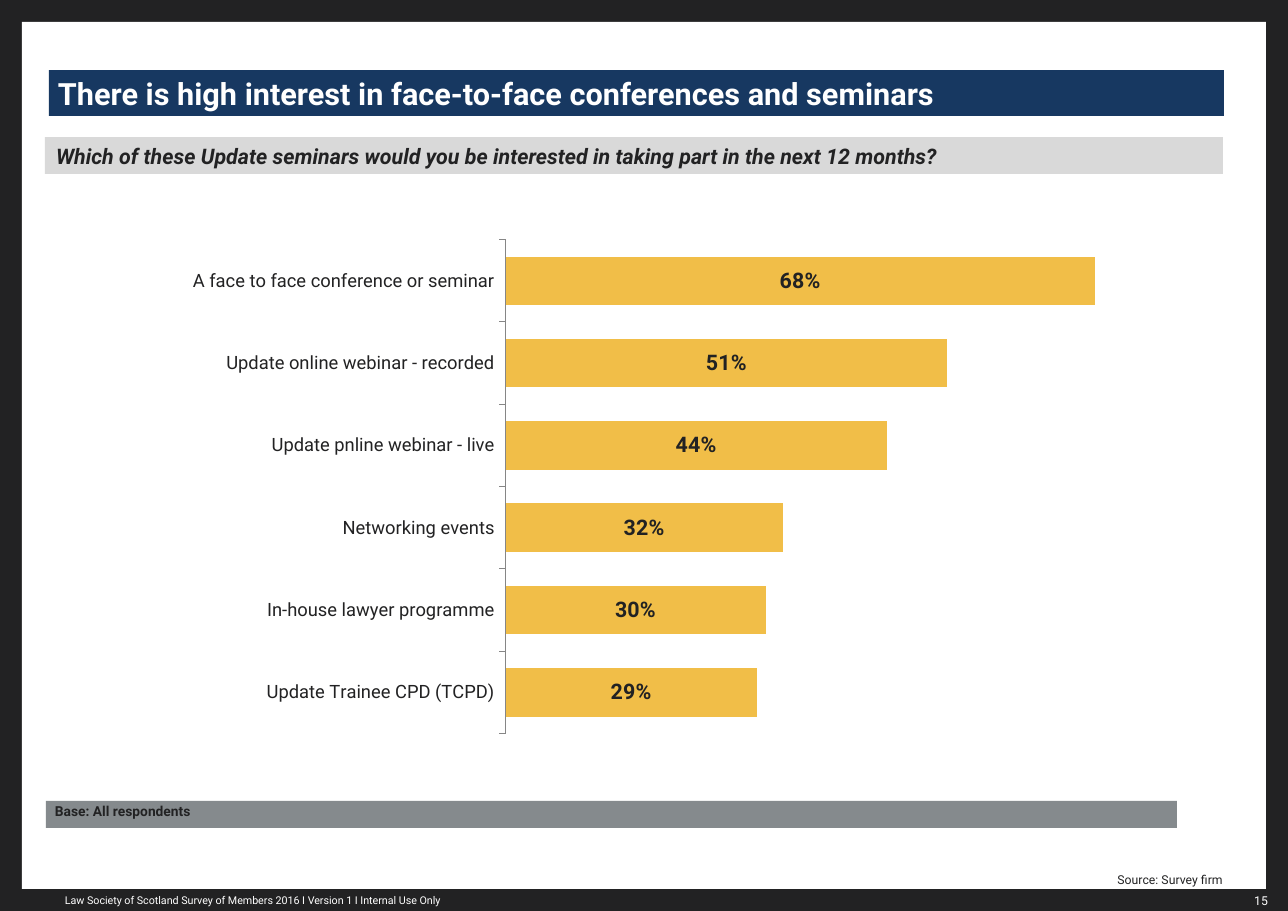
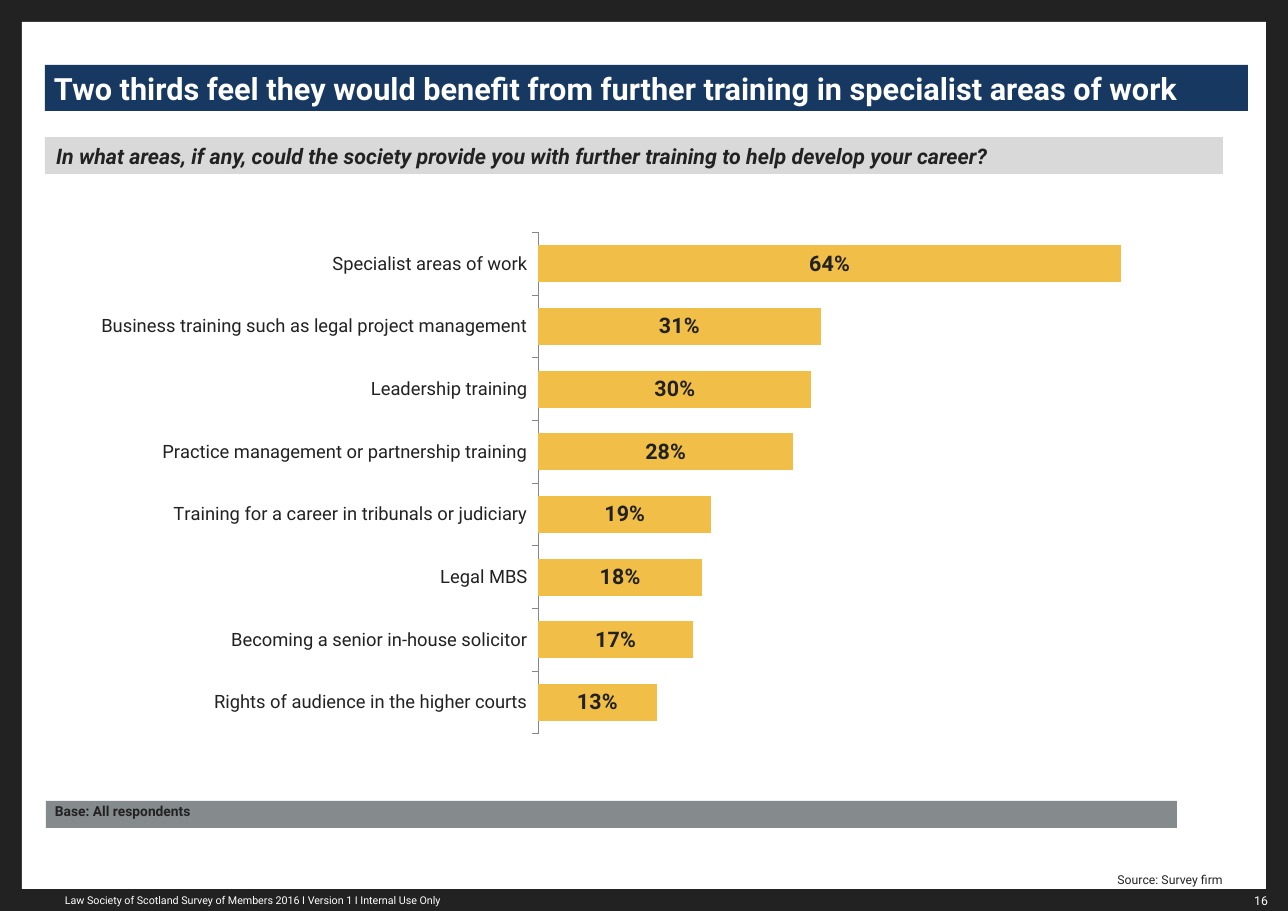
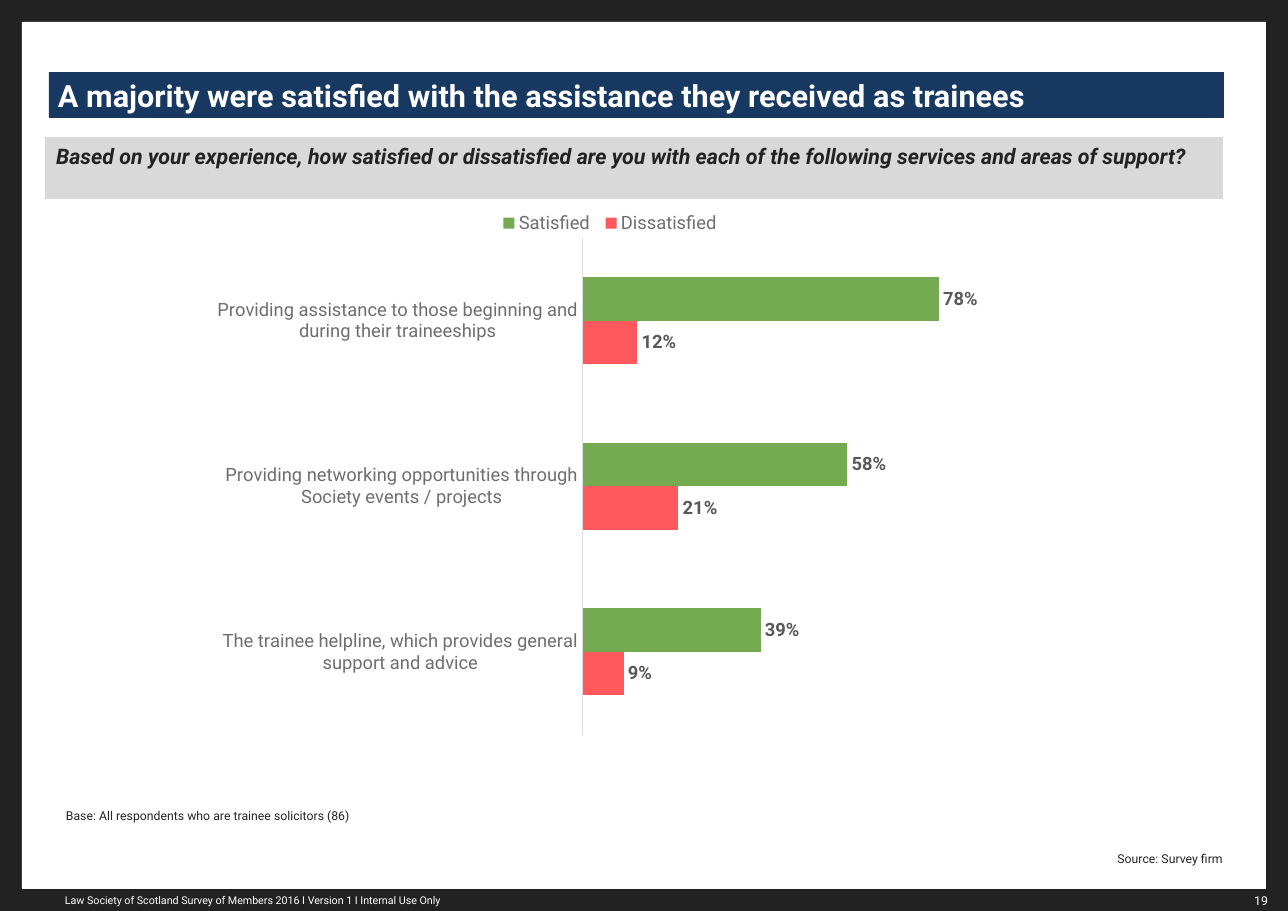
from lxml import etree
from pptx import Presentation
from pptx.chart.data import CategoryChartData
from pptx.dml.color import RGBColor
from pptx.enum.chart import XL_CHART_TYPE, XL_LABEL_POSITION, XL_LEGEND_POSITION, XL_TICK_MARK
from pptx.enum.shapes import MSO_SHAPE, PP_PLACEHOLDER
from pptx.enum.text import MSO_ANCHOR, MSO_AUTO_SIZE, PP_ALIGN
from pptx.oxml.ns import qn
from pptx.util import Pt

PX = 8298  # EMU per px, 110.2 px to the inch
FONT = "Roboto"
INK = RGBColor(0x22, 0x22, 0x23)
WHITE = RGBColor(0xFF, 0xFF, 0xFF)
NAVY = RGBColor(0x17, 0x38, 0x61)
PALE_GREY = RGBColor(0xD9, 0xD9, 0xD9)
BAND_GREY = RGBColor(0x85, 0x8A, 0x8D)
AXIS_GREY = RGBColor(0x86, 0x86, 0x86)
AXIS_PALE = RGBColor(0xDD, 0xDD, 0xDE)
TEXT_GREY = RGBColor(0x6E, 0x6E, 0x71)
LABEL_GREY = RGBColor(0x58, 0x58, 0x5B)
AMBER = RGBColor(0xF1, 0xBE, 0x48)
GREEN = RGBColor(0x74, 0xAA, 0x50)
RED = RGBColor(0xFF, 0x58, 0x5D)

LEFT, RIGHT = PP_ALIGN.LEFT, PP_ALIGN.RIGHT
TOP, MIDDLE, BOTTOM = MSO_ANCHOR.TOP, MSO_ANCHOR.MIDDLE, MSO_ANCHOR.BOTTOM
CENTER, OUTSIDE_END = XL_LABEL_POSITION.CENTER, XL_LABEL_POSITION.OUTSIDE_END
TICK_OUT, TICK_NONE = XL_TICK_MARK.OUTSIDE, XL_TICK_MARK.NONE

SINGLE_STYLE = {
    "text": INK, "axis": AXIS_GREY, "tick": TICK_OUT, "gap": 70,
    "label": (CENTER, 14, INK),
}
PAIRED_STYLE = {
    "text": TEXT_GREY, "axis": AXIS_PALE, "tick": TICK_NONE, "gap": 182,
    "label": (OUTSIDE_END, 12, LABEL_GREY),
}

SURVEY_PAGES = [
    {
        "number": 15,
        "title": "There is high interest in face-to-face conferences and seminars",
        "title_box": (49, 70, 1175, 46),
        "question": "Which of these Update seminars would you be interested in taking part "
                    "in the next 12 months?",
        "question_height": 37,
        "base": "Base: All respondents", "base_band": True, "source_top": 865,
        "chart_box": (89, 223, 1111, 520), "plot": (0.375, 0.032, 0.624, 0.95),
        "style": SINGLE_STYLE, "axis_max": 0.8,
        "categories": ["Update Trainee CPD (TCPD)", "In-house lawyer programme",
                       "Networking events", "Update pnline webinar - live",
                       "Update online webinar - recorded",
                       "A face to face conference or seminar"],
        "series": [("Series 1", AMBER, [0.29, 0.3, 0.32, 0.44, 0.51, 0.68])],
    },
    {
        "number": 16,
        "title": "Two thirds feel they would benefit from further training in specialist "
                 "areas of work",
        "title_box": (45, 65, 1203, 46),
        "question": "In what areas, if any, could the society provide you with further "
                    "training to help develop your career?",
        "question_height": 37,
        "base": "Base: All respondents", "base_band": True, "source_top": 865,
        "chart_box": (89, 223, 1118, 529), "plot": (0.402, 0.018, 0.57, 0.948),
        "style": SINGLE_STYLE, "axis_max": 0.7,
        "categories": ["Rights of audience in the higher courts",
                       "Becoming a senior in-house solicitor", "Legal MBS",
                       "Training for a career in tribunals or judiciary",
                       "Practice management or partnership training",
                       "Leadership training",
                       "Business training such as legal project management",
                       "Specialist areas of work"],
        "series": [("Series 1", AMBER, [0.13, 0.17, 0.18, 0.19, 0.28, 0.3, 0.31, 0.64])],
    },
    {
        "number": 19,
        "title": "A majority were satisfied with the assistance they received as trainees",
        "title_box": (49, 72, 1175, 46),
        "question": "Based on your experience, how satisfied or dissatisfied are you with "
                    "each of the following services and areas of support?",
        "question_height": 62,
        "base": "Base: All respondents who are trainee solicitors (86)",
        "base_band": False, "source_top": 844,
        "chart_box": (193, 203, 860, 573), "plot": (0.453, 0.061, 0.531, 0.867),
        "style": PAIRED_STYLE, "axis_max": 1,
        "categories": ["The trainee helpline, which provides general support and advice",
                       "Providing networking opportunities through Society events / projects",
                       "Providing assistance to those beginning and during their traineeships"],
        "series": [("Dissatisfied", RED, [0.09, 0.21, 0.12]),
                   ("Satisfied", GREEN, [0.39, 0.58, 0.78])],
    },
]


def write_text(shape, box, text, size, color, bold=False, italic=False, align=LEFT,
               anchor=TOP, inset=(0, 0), fill=None, line_spacing=1.0):
    """Place a shape at box, in px, and give it one formatted paragraph."""
    shape.left, shape.top, shape.width, shape.height = [v * PX for v in box]
    if fill is not None:
        shape.fill.solid()
        shape.fill.fore_color.rgb = fill
    frame = shape.text_frame
    frame.auto_size = MSO_AUTO_SIZE.NONE
    frame.word_wrap = True
    frame.vertical_anchor = anchor
    frame.margin_left = frame.margin_right = inset[0] * PX
    frame.margin_top = frame.margin_bottom = inset[1] * PX
    frame.text = text
    paragraph = frame.paragraphs[0]
    paragraph.alignment = align
    paragraph.line_spacing = line_spacing
    font = paragraph.runs[0].font
    font.name, font.size, font.bold, font.italic = FONT, Pt(size), bold, italic
    font.color.rgb = color


def set_layout(parent, index, fractions, inner=False):
    """Fix the place of a plot area or legend as fractions of the chart."""
    for old in parent.findall(qn("c:layout")):
        parent.remove(old)
    layout = etree.Element(qn("c:layout"))
    manual = etree.SubElement(layout, qn("c:manualLayout"))
    settings = [("layoutTarget", "inner")] if inner else []
    settings += [("xMode", "edge"), ("yMode", "edge"), *zip("xywh", fractions)]
    for tag, value in settings:
        etree.SubElement(manual, qn(f"c:{tag}")).set("val", str(value))
    parent.insert(index, layout)


prs = Presentation()
prs.slide_width, prs.slide_height = 1288 * PX, 911 * PX
master_fill = prs.slide_master.background.fill
master_fill.solid()
master_fill.fore_color.rgb = INK

title_layout = prs.slide_layouts[5]
for placeholder in list(title_layout.placeholders):
    if placeholder.placeholder_format.type != PP_PLACEHOLDER.TITLE:
        title_layout.shapes.element.remove(placeholder.element)
slides = [prs.slides.add_slide(title_layout) for _ in SURVEY_PAGES]

# The white page and the footer are drawn once and moved to the shared layout.
page = slides[0].shapes.add_shape(
    MSO_SHAPE.RECTANGLE, 22 * PX, 22 * PX, 1244 * PX, 867 * PX)
page.shadow.inherit = False
page.fill.solid()
page.fill.fore_color.rgb = WHITE
page.line.fill.background()
footer = slides[0].shapes.add_textbox(0, 0, 0, 0)
write_text(footer, (65, 889, 590, 22),
           "Law Society of Scotland Survey of Members 2016 I Version 1 I Internal Use Only",
           7, WHITE, anchor=MIDDLE)
for shared in (page, footer):
    title_layout.shapes.element.append(shared.element)

for slide, survey in zip(slides, SURVEY_PAGES):
    shapes = slide.shapes
    write_text(shapes.title, survey["title_box"], survey["title"], 20, WHITE, bold=True,
               anchor=BOTTOM, inset=(9, 4), fill=NAVY)
    write_text(shapes.add_textbox(0, 0, 0, 0), (45, 137, 1178, survey["question_height"]),
               survey["question"], 14, INK, bold=True, italic=True, inset=(11, 6),
               fill=PALE_GREY)
    base = shapes.add_textbox(0, 0, 0, 0)
    if survey["base_band"]:
        write_text(base, (46, 801, 1131, 27), survey["base"], 9, INK, bold=True,
                   inset=(9, 2), fill=BAND_GREY)
    else:
        write_text(base, (66, 801, 760, 22), survey["base"], 8, INK, anchor=BOTTOM,
                   line_spacing=1.1)
    write_text(shapes.add_textbox(0, 0, 0, 0), (869, survey["source_top"], 354, 22),
               "Source: Survey firm", 8, INK, align=RIGHT, anchor=BOTTOM, line_spacing=1.1)
    write_text(shapes.add_textbox(0, 0, 0, 0), (1207, 888, 70, 24), str(survey["number"]),
               8, WHITE, align=RIGHT, inset=(9, 4), line_spacing=1.1)

    chart_data = CategoryChartData(number_format="0%")
    chart_data.categories = survey["categories"]
    for name, _, values in survey["series"]:
        chart_data.add_series(name, values)
    chart = shapes.add_chart(XL_CHART_TYPE.BAR_CLUSTERED,
                             *[v * PX for v in survey["chart_box"]], chart_data).chart
    style = survey["style"]
    chart.has_title = False
    chart.font.name, chart.font.size = FONT, Pt(12)
    chart.font.color.rgb = style["text"]
    set_layout(chart.plots[0]._element.getparent(), 0, survey["plot"], inner=True)

    value_axis = chart.value_axis
    value_axis.minimum_scale, value_axis.maximum_scale = 0, survey["axis_max"]
    value_axis.has_major_gridlines = False
    value_axis.visible = False
    category_axis = chart.category_axis
    category_axis.major_tick_mark = style["tick"]
    category_axis.format.line.color.rgb = style["axis"]
    category_axis.format.line.width = Pt(0.75)

    plot = chart.plots[0]
    plot.vary_by_categories = False
    plot.gap_width, plot.overlap = style["gap"], 0
    label_position, label_size, label_color = style["label"]
    for series, (_, color, _) in zip(plot.series, survey["series"]):
        series.format.fill.solid()
        series.format.fill.fore_color.rgb = color
        labels = series.data_labels
        labels.show_value = True
        labels.position = label_position
        labels.number_format, labels.number_format_is_linked = "0%", False
        labels.font.name, labels.font.size, labels.font.bold = FONT, Pt(label_size), True
        labels.font.color.rgb = label_color

    chart.has_legend = len(survey["series"]) > 1
    if chart.has_legend:
        chart.legend.position = XL_LEGEND_POSITION.BOTTOM
        chart.legend.include_in_layout = False
        set_layout(chart.legend._element, 1, (0.35, 0.01, 0.27, 0.05))

prs.save("out.pptx")
